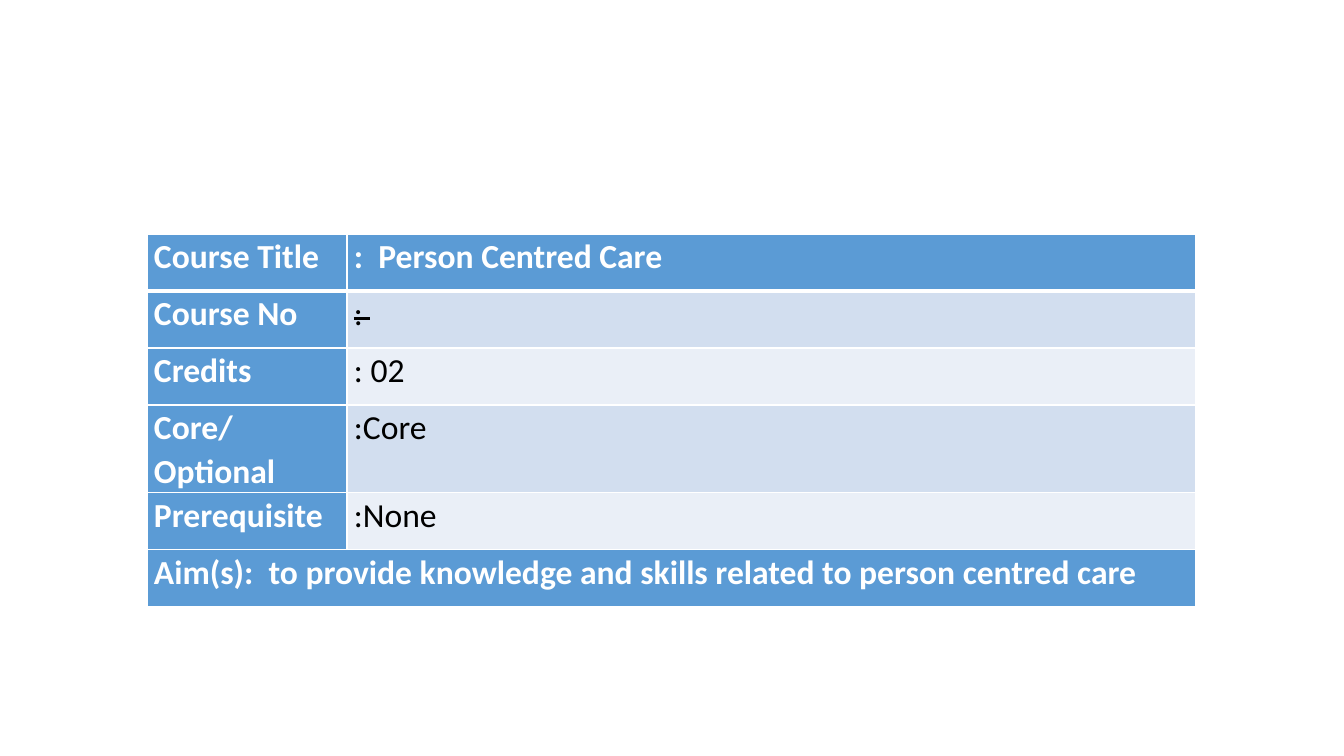
"""Build the course details slide: one table of labels and values."""
from lxml.etree import SubElement
from pptx import Presentation
from pptx.dml.color import RGBColor
from pptx.enum.text import PP_ALIGN
from pptx.oxml.ns import qn
from pptx.util import Pt

PX = 914400 / 100.8
COLORS = {"label": "5B9BD5", "odd": "D2DEEF", "even": "EAEFF7",
          "white": "FFFFFF", "black": "000000"}
COL_WIDTHS = [200, 849]
ROW_HEIGHT = 57
ROWS = [
    ("Course Title", ":  Person Centred Care"),
    ("Course No", ": "),
    ("Credits", ": 02"),
    ("Core/Optional", ":Core"),
    ("Prerequisite", ":None"),
    ("Aim(s):  to provide knowledge and skills related to person centred care",),
]


def px(n):
    return round(n * PX)


def add_border(cell, side, width):
    ln = SubElement(cell._tc.get_or_add_tcPr(), qn(f"a:{side}"), w=str(Pt(width)))
    SubElement(SubElement(ln, qn("a:solidFill")), qn("a:srgbClr"), val=COLORS["white"])


prs = Presentation()
prs.slide_width, prs.slide_height = px(1344), px(756)
s = prs.slides.add_slide(prs.slide_layouts[6])

table = s.shapes.add_table(len(ROWS), len(COL_WIDTHS), px(147), px(234),
                           px(sum(COL_WIDTHS)), px(ROW_HEIGHT * len(ROWS))).table
for column, width in zip(table.columns, COL_WIDTHS):
    column.width = px(width)
for row in table.rows:
    row.height = px(ROW_HEIGHT)
last = len(ROWS) - 1
table.cell(last, 0).merge(table.cell(last, 1))

for i, texts in enumerate(ROWS):
    for j, text in enumerate(texts):
        cell = table.cell(i, j)
        is_label = i == 0 or j == 0
        cell.margin_left = cell.margin_right = px(7)
        cell.margin_top = cell.margin_bottom = 0
        for side in ("lnL", "lnR", "lnT", "lnB"):
            header_edge = (i, side) in ((0, "lnB"), (1, "lnT"))
            add_border(cell, side, 3 if header_edge else 1)
        fill = "label" if is_label else "odd" if i % 2 else "even"
        cell.fill.solid()
        cell.fill.fore_color.rgb = RGBColor.from_string(COLORS[fill])

        p = cell.text_frame.paragraphs[0]
        p.line_spacing = 1.07
        p.alignment = PP_ALIGN.JUSTIFY if i == last else PP_ALIGN.LEFT
        r = p.add_run()
        r.text = text
        r.font.name = "Calibri"
        r.font.size = Pt(24)
        r.font.bold = is_label
        r.font.color.rgb = RGBColor.from_string(COLORS["white" if is_label else "black"])
        if text == ": ":
            r.font._element.set("strike", "sngStrike")

prs.save("out.pptx")
